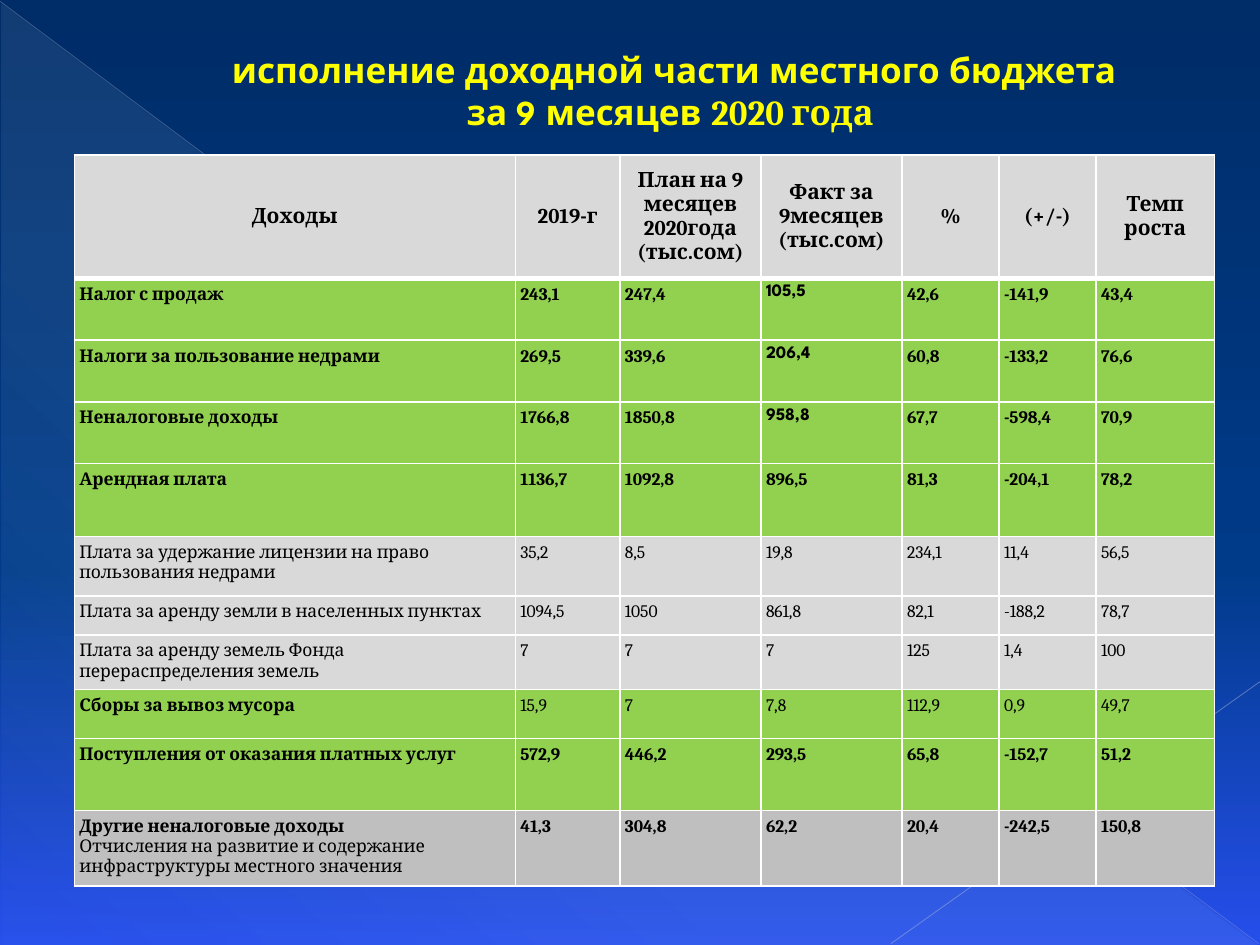
from lxml import etree
from pptx import Presentation
from pptx import util as u
from pptx.dml.color import RGBColor
from pptx.enum import shapes, text
from pptx.oxml import ns

COLORS = {
    "sky_top": "002C67", "sky_mid": "003B89", "sky_low": "264EEB",
    "haze": "C6E7FC", "diagonal": "AAB1D3", "corner": "B4BAD7",
    "title": "FFFF00", "title_edge": "227EAF", "ink": "000000",
    "rule": "FFFFFF", "head": "D9D9D9", "detail": "D9D9D9",
    "group": "92D050", "other": "BFBFBF",
}
SERIF, DISPLAY = "Cambria", "League Spartan"

TITLE = [("исполнение доходной части местного бюджета за 9 месяцев ", DISPLAY),
         ("2020 года ", SERIF)]
HEADINGS = ["Доходы", "2019-г", "План на 9 месяцев 2020года (тыс.сом)",
            "Факт за 9месяцев\n(тыс.сом)", "%", "(+/-)", "Темп роста"]
COLUMN_WIDTHS = [3.5, 0.83, 1.12, 1.12, 0.77, 0.77, 0.94]
HEAD_HEIGHT = 0.98
FACT_COLUMN = 3

# Height, fill, bold label, bold values, font of the fact column, label, values
INCOME = [
    (0.49, "group", True, True, DISPLAY, "Налог с продаж",
     "243,1 247,4 105,5 42,6 -141,9 43,4"),
    (0.49, "group", True, True, DISPLAY, "Налоги за пользование недрами",
     "269,5 339,6 206,4 60,8 -133,2 76,6"),
    (0.49, "group", True, True, DISPLAY, "Неналоговые доходы",
     "1766,8 1850,8 958,8 67,7 -598,4 70,9"),
    (0.58, "group", True, True, SERIF, "Арендная плата",
     "1136,7 1092,8 896,5 81,3 -204,1 78,2"),
    (0.47, "detail", False, False, SERIF,
     "Плата за удержание лицензии на право пользования недрами",
     "35,2 8,5 19,8 234,1 11,4 56,5"),
    (0.31, "detail", False, False, SERIF,
     "Плата за аренду земли в населенных пунктах",
     "1094,5 1050 861,8 82,1 -188,2 78,7"),
    (0.42, "detail", False, False, SERIF,
     "Плата за аренду земель Фонда перераспределения земель",
     "7 7 7 125 1,4 100"),
    (0.39, "group", True, False, SERIF, "Сборы за вывоз мусора",
     "15,9 7 7,8 112,9 0,9 49,7"),
    (0.57, "group", True, True, SERIF, "Поступления от оказания платных услуг",
     "572,9 446,2 293,5 65,8 -152,7 51,2"),
    (0.57, "other", True, True, SERIF,
     "Другие неналоговые доходы\n"
     "Отчисления на развитие и содержание инфраструктуры местного значения",
     "41,3 304,8 62,2 20,4 -242,5 150,8"),
]


def rgb(name):
    return RGBColor.from_string(COLORS[name])


def set_all(target, values):
    for name, value in values.items():
        setattr(target, name, value)


def add_xml(parent, tag, **attributes):
    values = {name: str(value) for name, value in attributes.items()}
    return etree.SubElement(parent, ns.qn(tag), values)


def add_color(parent, name, opacity=100):
    color = add_xml(parent, "a:srgbClr", val=COLORS[name])
    if opacity < 100:
        add_xml(color, "a:alpha", val=opacity * 1000)


def make_gradient(fill, properties, stops, angle):
    """Swap the solid fill of the properties element for a gradient."""
    fill.solid()
    solid = properties.find(ns.qn("a:solidFill"))
    gradient = etree.Element(ns.qn("a:gradFill"), rotWithShape="1")
    stop_list = add_xml(gradient, "a:gsLst")
    for position, name, opacity in stops:
        stop = add_xml(stop_list, "a:gs", pos=position * 1000)
        add_color(stop, name, opacity)
    add_xml(gradient, "a:lin", ang=angle * 60000, scaled=0)
    properties.replace(solid, gradient)


def add_line(page, start, end, color, width, opacity):
    line = page.shapes.add_connector(
        shapes.MSO_CONNECTOR.STRAIGHT, *map(u.Inches, start + end))
    line.line.width = u.Pt(width)
    line.line.color.rgb = rgb(color)
    properties = line.element.spPr
    tint = properties.find(".//" + ns.qn("a:srgbClr"))
    add_xml(tint, "a:alpha", val=opacity * 1000)
    add_xml(properties, "a:effectLst")


def add_span(para, words, size, font, color, bold):
    span = para.add_run()
    span.text = words
    set_all(span.font, {"size": u.Pt(size), "name": font, "bold": bold})
    span.font.color.rgb = rgb(color)
    return span


def add_backdrop(page):
    fill = page.background.fill
    fill.solid()
    make_gradient(fill, page.element.xpath(".//p:bgPr")[0],
                  [(0, "sky_top", 100), (60, "sky_mid", 100),
                   (100, "sky_low", 100)], 90)
    haze = page.shapes.add_shape(
        shapes.MSO_SHAPE.RIGHT_TRIANGLE,
        *map(u.Inches, (0.01, 0.02, 9.98, 7.48)))
    haze.shadow.inherit = False
    haze.line.fill.background()
    make_gradient(haze.fill, haze.element.spPr,
                  [(0, "haze", 10), (70, "haze", 8), (100, "haze", 1)], 133)
    add_line(page, (0, 0.01), (9.99, 7.49), "diagonal", 0.39, 35)
    add_line(page, (10, 5.41), (7.07, 7.49), "corner", 0.47, 45)


def add_title(page):
    box = page.shapes.add_textbox(*map(u.Inches, (1.69, 0.13, 7.32, 1.18)))
    set_all(box.text_frame, {"word_wrap": True,
                             "vertical_anchor": text.MSO_ANCHOR.MIDDLE})
    para = box.text_frame.paragraphs[0]
    para.alignment = text.PP_ALIGN.CENTER
    for words, font in TITLE:
        span = add_span(para, words, 20, font, "title", True)
        edge = etree.Element(ns.qn("a:ln"), w=str(u.Pt(0.5)))
        add_color(add_xml(edge, "a:solidFill"), "title_edge")
        span.font.fill  # the run properties exist from here on
        span.font.color.rgb = rgb("title")
        span.element.rPr.insert(0, edge) if hasattr(span, "element") else \
            para.runs[-1]._r.rPr.insert(0, edge)


def add_borders(cell, bottom):
    properties = cell._tc.get_or_add_tcPr()
    for side, width in (("L", 1), ("R", 1), ("T", 1), ("B", bottom)):
        border = add_xml(properties, "a:ln" + side, w=u.Pt(width))
        add_color(add_xml(border, "a:solidFill"), "rule")


def fill_cell(cell, lines, fill, size, font=SERIF, bottom=1, heading=False):
    """Write (words, bold) lines into a cell with its fill and borders."""
    add_borders(cell, bottom)
    cell.fill.solid()
    cell.fill.fore_color.rgb = rgb(fill)
    side, edge = u.Inches(0.04), u.Inches(0.05)
    anchor = text.MSO_ANCHOR.MIDDLE if heading else text.MSO_ANCHOR.TOP
    set_all(cell, {"margin_left": side, "margin_right": side,
                   "margin_top": edge, "margin_bottom": edge,
                   "vertical_anchor": anchor})
    frame = cell.text_frame
    for index, (words, bold) in enumerate(lines):
        para = frame.add_paragraph() if index else frame.paragraphs[0]
        para.alignment = (text.PP_ALIGN.CENTER if heading
                          else text.PP_ALIGN.LEFT)
        add_span(para, words, size, font, "ink", bold)


def add_income_table(page):
    heights = [HEAD_HEIGHT] + [row[0] for row in INCOME]
    frame = page.shapes.add_table(
        len(heights), len(COLUMN_WIDTHS), u.Inches(0.59), u.Inches(1.23),
        u.Inches(sum(COLUMN_WIDTHS)), u.Inches(sum(heights)))
    table = frame.table
    set_all(table, {"first_row": False, "horz_banding": False})
    for column, width in zip(table.columns, COLUMN_WIDTHS):
        column.width = u.Inches(width)
    for row, height in zip(table.rows, heights):
        row.height = u.Inches(height)

    # Heading row
    for column, heading in enumerate(HEADINGS):
        lines = [(words, True) for words in heading.split("\n")]
        fill_cell(table.cell(0, column), lines, "head", 12,
                  bottom=3, heading=True)

    # Income rows: only the first line of a label can be bold
    for row, record in enumerate(INCOME, 1):
        _, fill, label_bold, values_bold, fact_font, label, values = record
        lines = [(words, label_bold and index == 0)
                 for index, words in enumerate(label.split("\n"))]
        fill_cell(table.cell(row, 0), lines, fill, 10)
        for column, value in enumerate(values.split(), 1):
            font = fact_font if column == FACT_COLUMN else SERIF
            fill_cell(table.cell(row, column), [(value, values_bold)],
                      fill, 10, font)


def main():
    deck = Presentation()
    set_all(deck, {"slide_width": u.Inches(10), "slide_height": u.Inches(7.5)})
    page = deck.slides.add_slide(deck.slide_layouts[6])
    add_backdrop(page)
    add_title(page)
    add_income_table(page)
    deck.save("out.pptx")


if __name__ == "__main__":
    main()
